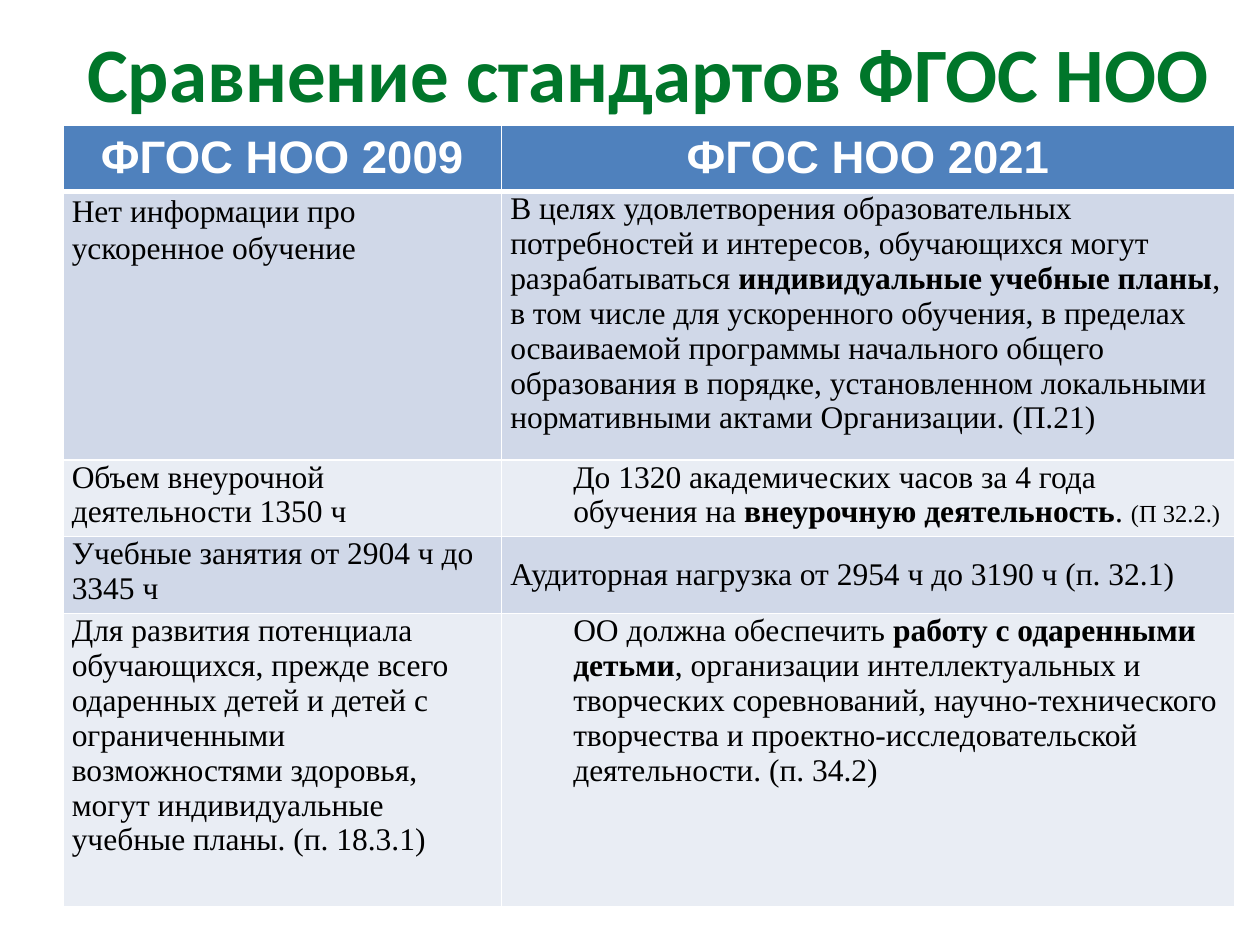
from lxml.etree import SubElement
from pptx import Presentation
from pptx.dml.color import RGBColor
from pptx.enum.text import MSO_ANCHOR, PP_ALIGN
from pptx.oxml.ns import qn
from pptx.util import Inches, Pt

THEME = {
    "title": {"name": "Calibri", "size": Pt(44), "bold": True, "color": "00762A"},
    "header": {"name": "Arial", "size": Pt(26), "bold": True, "color": "FFFFFF"},
    "body": {"name": "Times New Roman", "size": Pt(18), "bold": False, "color": "000000"},
    "header_fill": "4F81BD",
    "band_fills": ("D0D8E8", "E9EDF4"),
    "border": "FFFFFF",
}
STRONG = {"bold": True}
SMALL = {"size": Pt(14)}

TITLE = "Сравнение стандартов ФГОС НОО"
HEADERS = ("ФГОС НОО 2009", "ФГОС НОО 2021")
COLUMN_WIDTHS = (3.48, 5.82)
HEADER_HEIGHT = 0.53

# Each cell: a list of (text, format changes) spans, then optional layout.
ROWS = [
    {"height": 2.13, "cells": [
        {"spans": [("Нет информации про ускоренное обучение", {})], "line_spacing": 1.07},
        {"spans": [
            ("В целях удовлетворения образовательных потребностей и интересов, "
             "обучающихся могут разрабатываться ", {}),
            ("индивидуальные учебные планы", STRONG),
            (", в том числе для ускоренного обучения, в пределах осваиваемой программы "
             "начального общего образования в порядке, установленном локальными "
             "нормативными актами Организации. (П.21)", {})]},
    ]},
    {"height": 0.61, "cells": [
        {"spans": [("Объем внеурочной деятельности 1350 ч", {})]},
        {"indent": 0.5, "spans": [
            ("До 1320 академических часов за 4 года обучения на ", {}),
            ("внеурочную деятельность", STRONG), (". ", {}), ("(П 32.2.)", SMALL)]},
    ]},
    {"height": 0.61, "cells": [
        {"spans": [("Учебные занятия от 2904 ч до 3345 ч", {})]},
        {"spans": [("Аудиторная нагрузка от 2954 ч до 3190 ч (п. 32.1)", {})],
         "anchor": MSO_ANCHOR.MIDDLE},
    ]},
    {"height": 2.33, "cells": [
        {"spans": [
            ("Для развития потенциала обучающихся, прежде всего одаренных детей и детей "
             "с ограниченными возможностями здоровья, могут индивидуальные учебные планы. "
             "(п. 18.3.1)", {})]},
        {"indent": 0.5, "spans": [
            ("ОО должна обеспечить ", {}), ("работу с одаренными детьми", STRONG),
            (", организации интеллектуальных и творческих соревнований, "
             "научно-технического творчества и проектно-исследовательской деятельности. "
             "(п. 34.2)", {})]},
    ]},
]


def set_all(target, values):
    for name, value in values.items():
        setattr(target, name, value)


def add_span(para, text, style):
    span = para.add_run()
    span.text = text
    set_all(span.font, {key: value for key, value in style.items() if key != "color"})
    span.font.color.rgb = RGBColor.from_string(style["color"])


def add_borders(cell, bottom_width):
    """Call before filling the cell: lines must precede the fill in the XML."""
    properties = cell._tc.get_or_add_tcPr()
    widths = {"lnL": 1, "lnR": 1, "lnT": 1, "lnB": bottom_width}
    for side, width in widths.items():
        line = SubElement(properties, qn(f"a:{side}"), w=str(Pt(width)))
        SubElement(SubElement(line, qn("a:solidFill")), qn("a:srgbClr"), val=THEME["border"])


def paint_cell(cell, fill, bottom_width=1):
    add_borders(cell, bottom_width)
    cell.fill.solid()
    cell.fill.fore_color.rgb = RGBColor.from_string(fill)


def add_title(page):
    title = page.shapes.title
    set_all(title, {"left": Inches(0.5), "top": Inches(0.3),
                    "width": Inches(9.3), "height": Inches(0.54)})
    set_all(title.text_frame, {"word_wrap": True, "vertical_anchor": MSO_ANCHOR.MIDDLE})
    para = title.text_frame.paragraphs[0]
    para.alignment = PP_ALIGN.CENTER
    add_span(para, TITLE, THEME["title"])


def fill_header(cell, text):
    paint_cell(cell, THEME["header_fill"], bottom_width=3)
    cell.vertical_anchor = MSO_ANCHOR.MIDDLE
    para = cell.text_frame.paragraphs[0]
    para.alignment = PP_ALIGN.CENTER
    add_span(para, text, THEME["header"])


def fill_body(cell, content, fill):
    paint_cell(cell, fill)
    set_all(cell, {"margin_left": Inches(0.07), "margin_right": Inches(0.07),
                   "margin_top": 0, "margin_bottom": 0,
                   "vertical_anchor": content.get("anchor", MSO_ANCHOR.TOP)})
    para = cell.text_frame.paragraphs[0]
    para.line_spacing = content.get("line_spacing")
    if "indent" in content:
        para._p.get_or_add_pPr().set("marL", str(Inches(content["indent"])))
    for text, changes in content["spans"]:
        add_span(para, text, {**THEME["body"], **changes})


def add_comparison(page):
    heights = [HEADER_HEIGHT] + [row["height"] for row in ROWS]
    table = page.shapes.add_table(
        len(heights), len(HEADERS), Inches(0.5), Inches(0.99),
        Inches(sum(COLUMN_WIDTHS)), Inches(sum(heights))).table
    for column, width in zip(table.columns, COLUMN_WIDTHS):
        column.width = Inches(width)
    for row, height in zip(table.rows, heights):
        row.height = Inches(height)
    for column, text in enumerate(HEADERS):
        fill_header(table.cell(0, column), text)
    for index, row in enumerate(ROWS):
        for column, content in enumerate(row["cells"]):
            fill_body(table.cell(index + 1, column), content, THEME["band_fills"][index % 2])


def main():
    deck = Presentation()
    set_all(deck, {"slide_width": Inches(10), "slide_height": Inches(7.5)})
    page = deck.slides.add_slide(deck.slide_layouts[5])
    add_title(page)
    add_comparison(page)
    deck.save("out.pptx")


if __name__ == "__main__":
    main()
